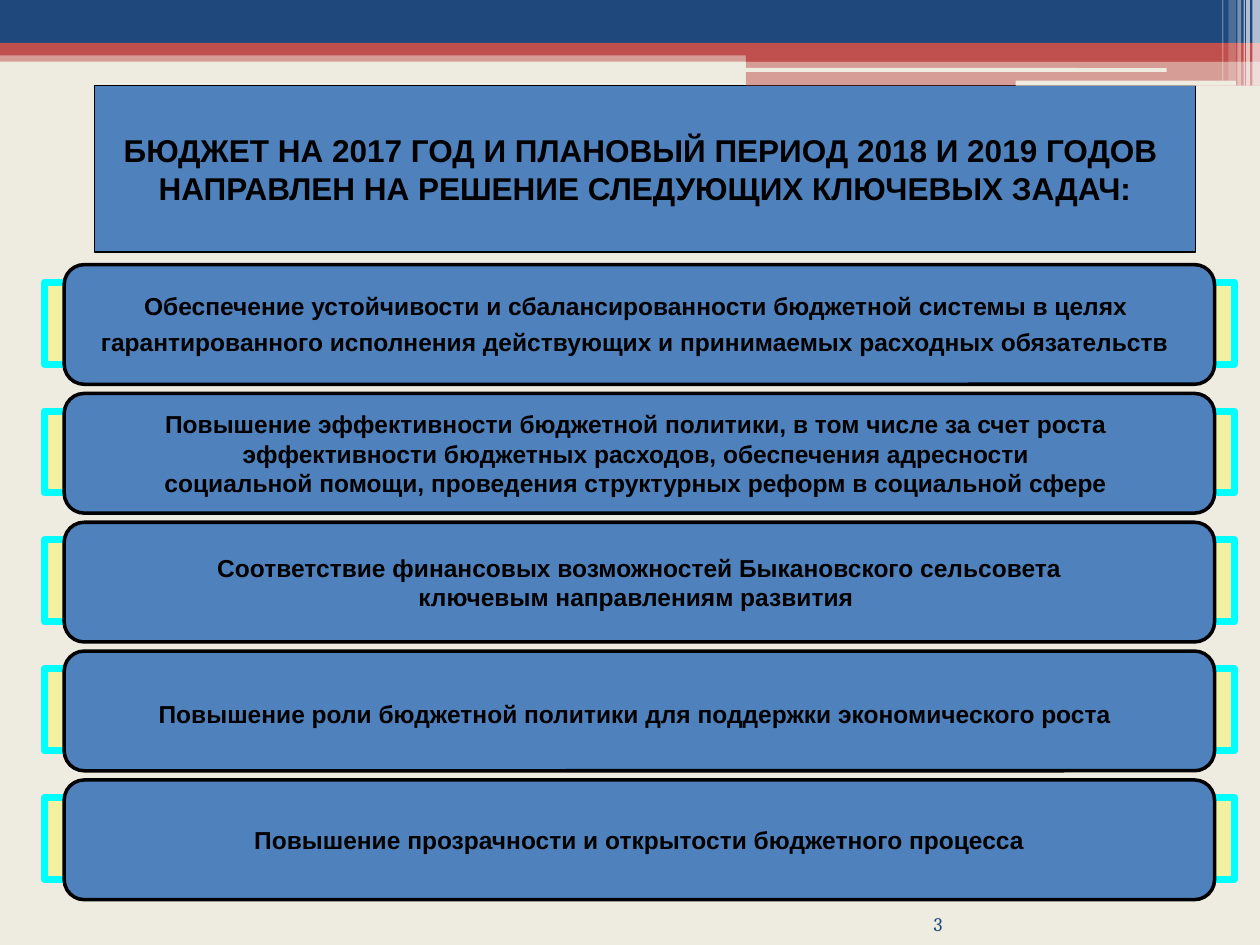
from pptx import Presentation
from pptx.dml.color import RGBColor
from pptx.enum.shapes import MSO_SHAPE as Shape
from pptx.enum.text import MSO_ANCHOR as Anchor, MSO_AUTO_SIZE as AutoSize, PP_ALIGN as Align
from pptx.oxml.ns import qn
from pptx.util import Inches, Pt
from lxml import etree

BLACK, BLUE, NAVY, RED, CREAM, WHITE = "000000", "4F81BD", "1F497D", "C0504D", "EEECE1", "FFFFFF"
YELLOW, CYAN = "FFFF00", "00FFFF"

HEADER_BARS = [
    (0, 0.4, 10, 0.09, RED, 50),
    (0, 0, 10, 0.34, NAVY, 100),
    (0, 0.34, 10, 0.1, RED, 100),
    (5.92, 0.39, 4.08, 0.1, RED, 100),
    (5.92, 0.48, 4.08, 0.2, RED, 50),
]
HEADER_SLITS = [(5.91, 0.54, 3.35, 0.03), (8.06, 0.64, 1.75, 0.04)]
HEADER_STRIPES = [
    (9.94, 0.06, 0.68, 65),
    (9.89, 0.03, 0.68, 65),
    (9.87, 0.01, 0.68, 60),
    (9.82, 0.03, 0.68, 40),
    (9.75, 0.06, 0.64, 20),
    (9.7, 0.01, 0.64, 30),
]
HEADING = [
    "БЮДЖЕТ НА 2017 ГОД И ПЛАНОВЫЙ ПЕРИОД 2018 И 2019 ГОДОВ ",
    "НАПРАВЛЕН НА РЕШЕНИЕ СЛЕДУЮЩИХ КЛЮЧЕВЫХ ЗАДАЧ:",
]
TASKS = [
    (["Обеспечение устойчивости и сбалансированности бюджетной системы в целях ",
      "гарантированного исполнения действующих и принимаемых расходных обязательств"], True),
    (["Повышение эффективности бюджетной политики, в том числе за счет роста ",
      "эффективности бюджетных расходов, обеспечения адресности ",
      "социальной помощи, проведения структурных реформ в социальной сфере "], False),
    (["Соответствие финансовых возможностей Быкановского сельсовета",
      "ключевым направлениям развития "], False),
    (["Повышение роли бюджетной политики для поддержки экономического роста"], True),
    (["Повышение прозрачности и открытости бюджетного процесса"], False),
]
TASK_TOP, TASK_STEP = 2.1, 1.0225


def color(value):
    """Turn a hex string into a colour."""
    return RGBColor.from_string(value)


def paint(box, fill, opacity=100, line=None, width=0):
    """Give a shape its fill, opacity and outline."""
    box.fill.solid()
    box.fill.fore_color.rgb = color(fill)
    if opacity < 100:
        tint = box.fill._xPr.find(qn("a:solidFill"))[0]
        etree.SubElement(tint, qn("a:alpha")).set("val", str(opacity * 1000))
    if line:
        box.line.color.rgb = color(line)
        box.line.width = Pt(width)
    else:
        box.line.fill.background()


def add_box(shapes, kind, left, top, width, height, *style):
    """Add a painted shape without a shadow."""
    box = shapes.add_shape(kind, Inches(left), Inches(top), Inches(width), Inches(height))
    box.shadow.inherit = False
    paint(box, *style)
    return box


def style_span(span, size, font="Arial", ink=BLACK, bold=True):
    """Set the font of one run."""
    span.font.name = font
    span.font.size = Pt(size)
    span.font.bold = bold
    span.font.color.rgb = color(ink)


def write_lines(box, lines, size):
    """Write centred bold lines that do not wrap."""
    frame = box.text_frame
    frame.text = "\n".join(lines)
    frame.word_wrap = False
    frame.auto_size = AutoSize.NONE
    frame.vertical_anchor = Anchor.MIDDLE
    for para in frame.paragraphs:
        para.alignment = Align.CENTER
        for span in para.runs:
            style_span(span, size)


def add_header(page):
    """Draw the bands and stripes along the top."""
    for left, top, width, height, fill, opacity in HEADER_BARS:
        add_box(page.shapes, Shape.RECTANGLE, left, top, width, height, fill, opacity)
    for slit in HEADER_SLITS:
        add_box(page.shapes, Shape.ROUNDED_RECTANGLE, *slit, CREAM)
    for left, width, height, opacity in HEADER_STRIPES:
        add_box(page.shapes, Shape.RECTANGLE, left, 0, width, height, WHITE, opacity)


def add_heading(page):
    """Place the title in its blue panel."""
    title = page.shapes.title
    title.left, title.top = Inches(0.75), Inches(0.68)
    title.width, title.height = Inches(8.74), Inches(1.32)
    paint(title, BLUE, 100, BLACK, 0.75)
    write_lines(title, HEADING, 18)


def add_task(page, top, lines, has_tall_space):
    """Add a task card in front of its yellow bar."""
    group = page.shapes.add_group_shape()
    add_box(group.shapes, Shape.RECTANGLE, 0.35, top + 0.14, 9.45, 0.65, YELLOW, 28, CYAN, 4)
    card = add_box(group.shapes, Shape.ROUNDED_RECTANGLE, 0.51, top, 9.13, 0.95, BLUE, 100, BLACK, 2)
    write_lines(card, lines, 14)
    if has_tall_space:
        span = card.text_frame.paragraphs[-1].add_run()
        span.text = " "
        style_span(span, 18, bold=False)


def add_page_number(page, number):
    """Write the page number at the bottom."""
    box = page.shapes.add_textbox(Inches(6.84), Inches(7.17), Inches(0.64), Inches(0.25))
    frame = box.text_frame
    frame.margin_left = frame.margin_top = frame.margin_right = frame.margin_bottom = 0
    frame.word_wrap = True
    frame.vertical_anchor = Anchor.BOTTOM
    frame.text = number
    para = frame.paragraphs[0]
    para.alignment = Align.RIGHT
    style_span(para.runs[0], 11, "Cambria", NAVY, False)


def main():
    """Build the slide and save it."""
    deck = Presentation()
    deck.slide_width, deck.slide_height = Inches(10), Inches(7.5)
    page = deck.slides.add_slide(deck.slide_layouts[5])
    page.background.fill.solid()
    page.background.fill.fore_color.rgb = color(CREAM)
    add_header(page)
    add_page_number(page, "3")
    add_heading(page)
    for row, (lines, has_tall_space) in enumerate(TASKS):
        add_task(page, TASK_TOP + row * TASK_STEP, lines, has_tall_space)
    deck.save("out.pptx")


if __name__ == "__main__":
    main()
